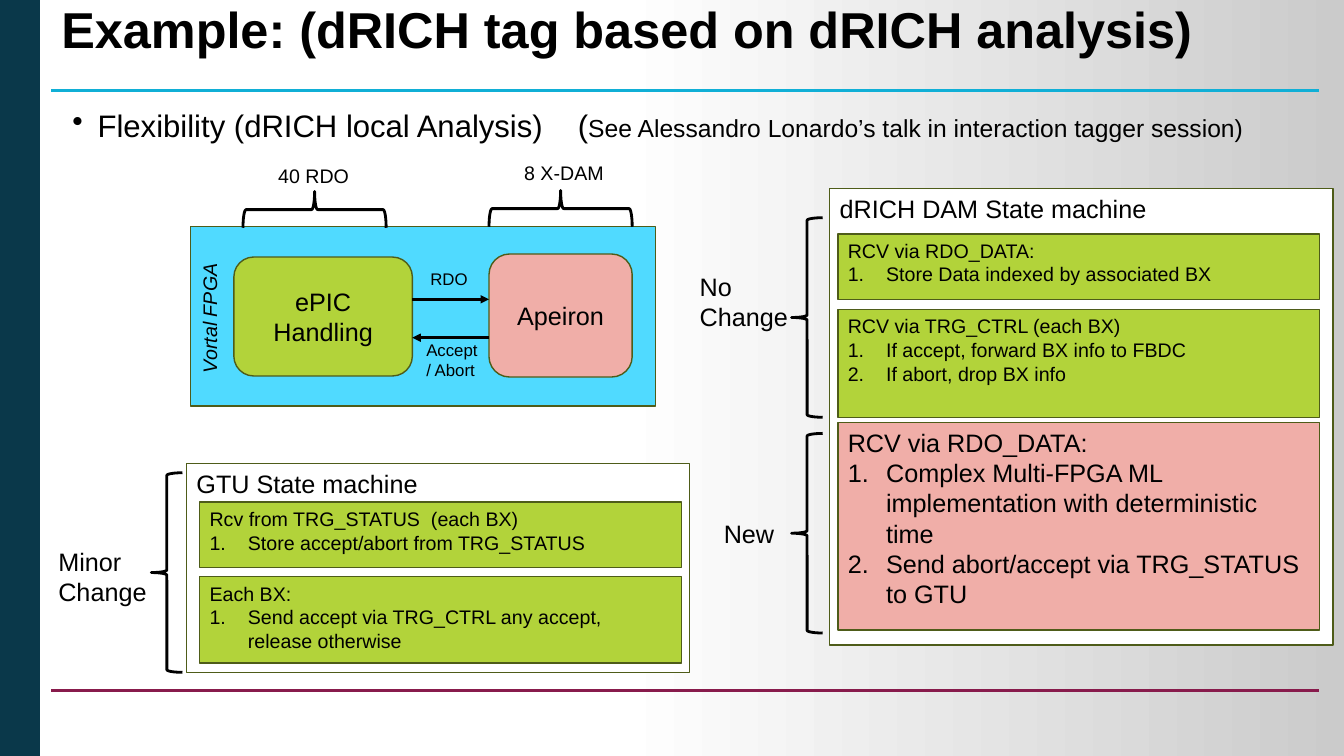
from dataclasses import dataclass, field
from typing import Any

import pptx
import pptx.dml.color
import pptx.enum.dml
import pptx.enum.shapes
import pptx.enum.text
import pptx.oxml
import pptx.oxml.ns
import pptx.util
from pptx.util import Inches

COLORS = {
    "black": "000000", "white": "FFFFFF", "navy": "0A384A", "gray": "CBCBCB",
    "olive": "4E5C19", "green": "B2D33A", "pink": "F0AEA8", "sky": "50DAFF",
    "cyan": "10AFD6", "wine": "881B4C",
}
SHAPE = pptx.enum.shapes.MSO_SHAPE
ANCHOR = pptx.enum.text.MSO_ANCHOR
ALIGN = pptx.enum.text.PP_ALIGN
Frame = tuple[float, float, float, float]
qn = pptx.oxml.ns.qn


@dataclass(frozen=True)
class Box:
    """Filled shape: a heading line followed by numbered steps."""
    frame: Frame
    fill: str
    heading: str = ""
    steps: tuple[str, ...] = ()
    size: float = 18
    preset: Any = SHAPE.RECTANGLE
    centered: bool = False


@dataclass(frozen=True)
class Label:
    frame: Frame
    lines: tuple[str, ...]
    size: float = 18
    rotation: float = 0
    wrap: bool = False
    font: dict[str, Any] = field(default_factory=dict)
    paragraph: dict[str, Any] = field(default_factory=dict)


@dataclass(frozen=True)
class Brace:
    frame: Frame
    rotation: float = 0


@dataclass(frozen=True)
class Line:
    start: tuple[float, float]
    end: tuple[float, float]
    color: str = "black"
    width: float = 2
    arrow: bool = False


def rgb(name: str) -> pptx.dml.color.RGBColor:
    return pptx.dml.color.RGBColor.from_string(COLORS[name])


def apply(target: Any, values: dict[str, Any]) -> None:
    for name, value in values.items():
        setattr(target, name, value)


def add_run(paragraph: Any, text: str, size: float, **extra: Any) -> Any:
    run = paragraph.add_run()
    run.text = text
    apply(run.font, {"name": "Arial", "size": pptx.util.Pt(size), **extra})
    run.font.color.rgb = rgb("black")
    return run


def set_bullet(paragraph: Any, indent: float, tag: str, **attributes: str) -> None:
    properties = paragraph._p.get_or_add_pPr()
    properties.set("marL", str(Inches(indent)))
    properties.set("indent", str(Inches(-indent)))
    bullet = properties.makeelement(qn(tag), attributes)
    properties.append(bullet)


def write_lines(frame: Any, lines: tuple[str, ...], size: float,
                font: dict[str, Any], values: dict[str, Any]) -> None:
    for index, text in enumerate(lines):
        paragraph = frame.paragraphs[0] if index == 0 else frame.add_paragraph()
        apply(paragraph, values)
        add_run(paragraph, text, size, **font)


def add_box(slide: Any, box: Box) -> None:
    shape = slide.shapes.add_shape(box.preset, *map(Inches, box.frame))
    shape.shadow.inherit = False
    shape.fill.solid()
    shape.fill.fore_color.rgb = rgb(box.fill)
    shape.line.color.rgb = rgb("olive")
    shape.line.width = pptx.util.Pt(1)
    frame = shape.text_frame
    apply(frame, {"word_wrap": True,
                  "vertical_anchor": ANCHOR.MIDDLE if box.centered else ANCHOR.TOP})
    alignment = ALIGN.CENTER if box.centered else ALIGN.LEFT
    if box.heading:
        write_lines(frame, (box.heading, *box.steps), box.size, {}, {"alignment": alignment})
    for paragraph in frame.paragraphs[1:]:
        set_bullet(paragraph, 0.38, "a:buAutoNum", type="arabicPeriod")


def add_label(slide: Any, label: Label) -> Any:
    text_box = slide.shapes.add_textbox(*map(Inches, label.frame))
    text_box.rotation = label.rotation
    apply(text_box.text_frame, {"word_wrap": label.wrap, "vertical_anchor": ANCHOR.TOP})
    write_lines(text_box.text_frame, label.lines, label.size, label.font, label.paragraph)
    return text_box.text_frame


def add_brace(slide: Any, brace: Brace) -> None:
    shape = slide.shapes.add_shape(SHAPE.LEFT_BRACE, *map(Inches, brace.frame))
    shape.shadow.inherit = False
    shape.rotation = brace.rotation
    shape.fill.background()
    shape.line.color.rgb = rgb("black")
    shape.line.width = pptx.util.Pt(2)


def add_line(slide: Any, line: Line) -> None:
    connector = slide.shapes.add_connector(
        pptx.enum.shapes.MSO_CONNECTOR.STRAIGHT, *map(Inches, line.start + line.end))
    connector.line.color.rgb = rgb(line.color)
    connector.line.width = pptx.util.Pt(line.width)
    if line.arrow:
        outline = connector.line._get_or_add_ln()
        outline.append(outline.makeelement(qn("a:tailEnd"), {"type": "triangle"}))
    properties = connector._element.spPr
    properties.append(properties.makeelement(qn("a:effectLst"), {}))


def paint_background(slide: Any) -> None:
    fill = slide.background.fill
    fill.gradient()
    fill.gradient_angle = 0
    stops = slide.element.find(".//" + qn("a:gsLst"))
    for stop in list(stops):
        stops.remove(stop)
    for percent, name in ((3, "navy"), (3, "white"), (46, "white"), (100, "gray")):
        stop = stops.makeelement(qn("a:gs"), {"pos": str(percent * 1000)})
        stop.append(stop.makeelement(qn("a:srgbClr"), {"val": COLORS[name]}))
        stops.append(stop)


RULES = (Line((0.51, 0.9), (13.08, 0.9), "cyan"),
         Line((0.51, 6.85), (13.08, 6.85), "wine", 1.5))
TITLE = Label((0.51, 0, 12.58, 0.89), ("Example: (dRICH tag based on dRICH analysis)",),
              36, wrap=True, font={"bold": True}, paragraph={"line_spacing": 0.9})
TOPIC = Label((0.62, 1.01, 12.6, 0.73), ("Flexibility (dRICH local Analysis)",),
              22.2, wrap=True, paragraph={"space_after": pptx.util.Pt(4)})
BOXES = (
    # GTU state machine
    Box((1.85, 4.6, 4.99, 2.07), "white", "GTU State machine"),
    Box((1.98, 4.98, 4.78, 0.65), "green", "Rcv from TRG_STATUS  (each BX)",
        ("Store accept/abort from TRG_STATUS",), 14),
    Box((1.98, 5.72, 4.78, 0.86), "green", "Each BX:",
        ("Send accept via TRG_CTRL any accept, release otherwise",), 14),
    # DAM state machine
    Box((8.23, 1.87, 4.99, 4.53), "white", "dRICH DAM State machine"),
    Box((8.31, 2.32, 4.78, 0.65), "green", "RCV via RDO_DATA:",
        ("Store Data indexed by associated BX",), 14),
    Box((8.31, 3.07, 4.78, 1.07), "green", "RCV via TRG_CTRL (each BX)",
        ("If accept, forward BX info to FBDC", "If abort, drop BX info"), 14),
    Box((8.31, 4.19, 4.78, 2.06), "pink", "RCV via RDO_DATA:",
        ("Complex Multi-FPGA ML implementation with deterministic time",
         "Send abort/accept via TRG_STATUS to GTU")),
    # FPGA diagram
    Box((1.89, 2.25, 4.61, 1.78), "sky"),
    Box((4.85, 2.52, 1.42, 1.22), "pink", "Apeiron",
        preset=SHAPE.ROUNDED_RECTANGLE, centered=True),
    Box((2.32, 2.55, 1.77, 1.18), "green", "ePIC Handling",
        preset=SHAPE.ROUNDED_RECTANGLE, centered=True),
)
BRACES = (Brace((1.5, 4.69, 0.31, 1.98)), Brace((7.85, 2.16, 0.31, 1.98)),
          Brace((7.85, 4.3, 0.31, 1.98)),
          Brace((2.94, 1.37, 0.36, 1.42), 90), Brace((5.38, 1.36, 0.36, 1.42), 90))
ARROWS = (Line((4.09, 2.97), (4.85, 2.97), arrow=True),
          Line((4.85, 3.35), (4.09, 3.35), arrow=True))
LABELS = (
    Label((0.48, 5.37, 1.09, 0.71), ("Minor", "Change")),
    Label((6.84, 2.64, 1.09, 0.71), ("No", "Change")),
    Label((7.08, 5.09, 0.71, 0.4), ("New",)),
    Label((2.66, 1.58, 0.91, 0.34), ("40 RDO",), 14),
    Label((5.1, 1.55, 1, 0.34), ("8 X-DAM",), 14),
    Label((4.17, 2.62, 1.08, 0.3), ("RDO",), 12, wrap=True),
    Label((4.13, 3.32, 0.76, 0.5), ("Accept / Abort",), 12, wrap=True),
    Label((1.41, 2.96, 1.34, 0.34), ("Vortal FPGA",), 14, 270, font={"italic": True}),
)


def main() -> None:
    deck = pptx.Presentation()
    deck.slide_width, deck.slide_height = Inches(13.33), Inches(7.5)
    slide = deck.slides.add_slide(deck.slide_layouts[6])
    paint_background(slide)

    # Heading
    for rule in RULES:
        add_line(slide, rule)
    add_label(slide, TITLE)
    topic = add_label(slide, TOPIC).paragraphs[0]
    set_bullet(topic, 0.25, "a:buChar", char="•")
    gap = add_run(topic, " ", TOPIC.size)
    gap.font._element.set("spc", "1850")  # widens the gap before the bracket
    add_run(topic, "(", TOPIC.size)
    add_run(topic, "See Alessandro Lonardo’s talk in interaction tagger session)", 17.6)

    # Diagram and state machines
    for draw, parts in ((add_box, BOXES), (add_brace, BRACES),
                        (add_line, ARROWS), (add_label, LABELS)):
        for part in parts:
            draw(slide, part)
    deck.save("out.pptx")


if __name__ == "__main__":
    main()
